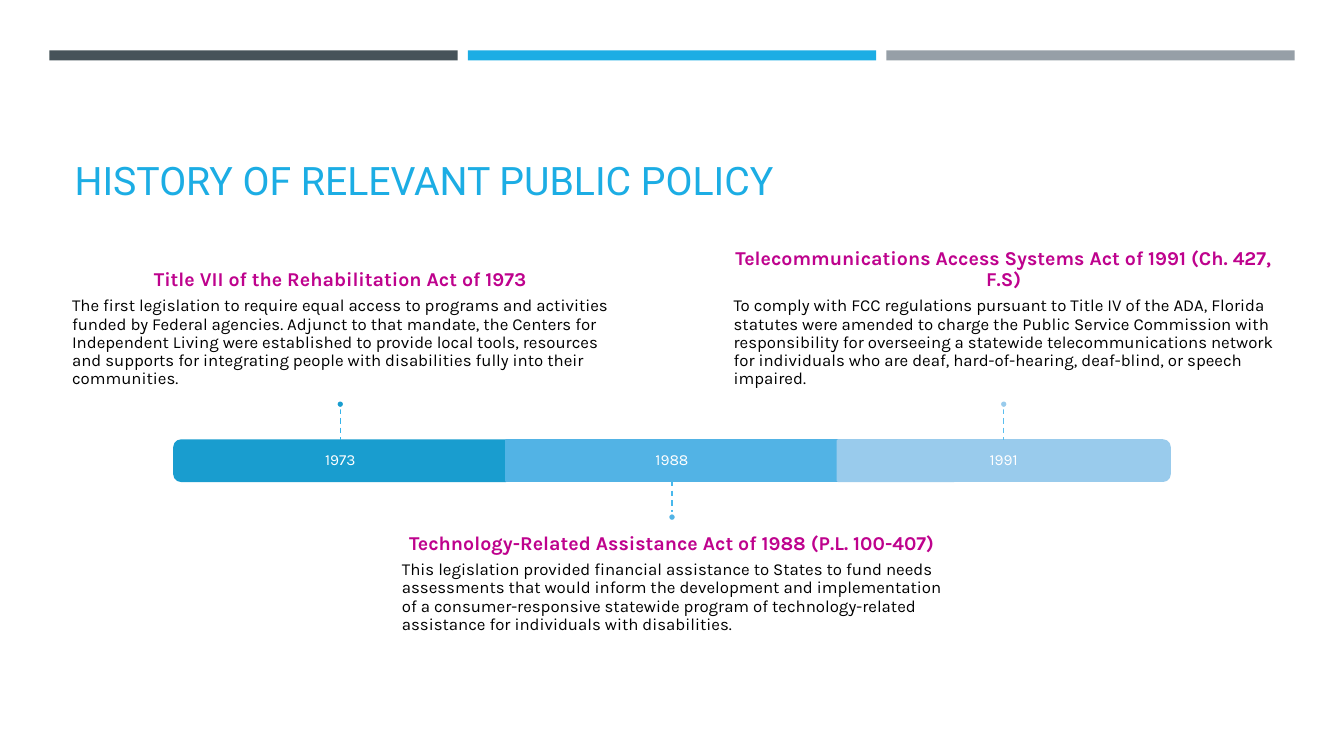
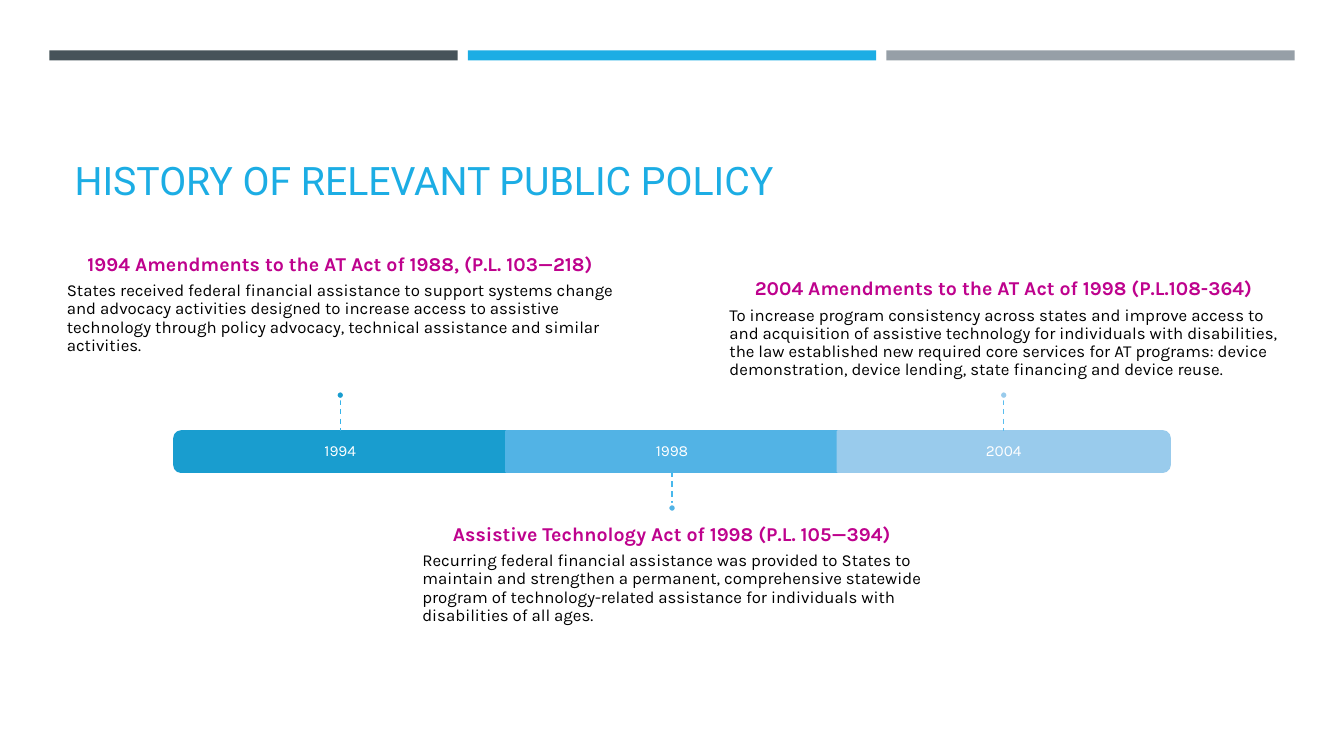
from lxml.etree import SubElement
from pptx import Presentation
from pptx.dml.color import RGBColor
from pptx.enum.dml import MSO_LINE
from pptx.enum.shapes import MSO_CONNECTOR, MSO_SHAPE
from pptx.enum.text import MSO_ANCHOR as Anchor, MSO_AUTO_SIZE, PP_ALIGN as Align
from pptx.oxml.ns import qn
from pptx.util import Inches, Pt

# Content: year, heading, description, extra space below the text
TITLE = "HISTORY OF RELEVANT PUBLIC POLICY"
TIMELINES = [
    {"bar_top": 4.37, "events": [
        ("1973", "Title VII of the Rehabilitation Act of 1973",
         "The first legislation to require equal access to programs and activities funded by "
         "Federal agencies. Adjunct to that mandate, the Centers for Independent Living were "
         "established to provide local tools, resources and supports for integrating people "
         "with disabilities fully into their communities.", 0),
        ("1988", "Technology-Related Assistance Act of 1988 (P.L. 100-407)",
         "This legislation provided financial assistance to States to fund needs assessments "
         "that would inform the development and implementation of a consumer-responsive "
         "statewide program of technology-related assistance for individuals with "
         "disabilities.", 0),
        ("1991", "Telecommunications Access Systems Act of 1991 (Ch. 427, F.S)",
         "To comply with FCC regulations pursuant to Title IV of the ADA, Florida statutes "
         "were amended to charge the Public Service Commission with responsibility for "
         "overseeing a statewide telecommunications network for individuals who are deaf, "
         "hard-of-hearing, deaf-blind, or speech impaired.", 0),
    ]},
    {"bar_top": 4.28, "events": [
        ("1994", "1994 Amendments to the AT Act of 1988, (P.L. 103—218)",
         "States received federal financial assistance to support systems change and advocacy "
         "activities designed to increase access to assistive technology through policy "
         "advocacy, technical assistance and similar activities.", 0.24),
        ("1998", "Assistive Technology Act of 1998 (P.L. 105—394)",
         "Recurring federal financial assistance was provided to States to maintain and "
         "strengthen a permanent, comprehensive statewide program of technology-related "
         "assistance for individuals with disabilities of all ages.", 0),
        ("2004", "2004 Amendments to the AT Act of 1998 (P.L.108-364)",
         "To increase program consistency across states and improve access to and acquisition "
         "of assistive technology for individuals with disabilities, the law established new "
         "required core services for AT programs: device demonstration, device lending, state "
         "financing and device reuse.", 0),
    ]},
]

# Shared style
COLORS = {"slate": "465359", "sky": "1CADE4", "gray": "969FA7", "magenta": "BE028D",
          "black": "000000", "white": "FFFFFF"}
BANDS = ["slate", "sky", "gray"]
# Shape, rotation, fill, stem colour, whether the text is above the bar
SEGMENTS = [
    (MSO_SHAPE.ROUND_2_SAME_RECTANGLE, 270, "199DCF", "36B3E9", True),
    (MSO_SHAPE.RECTANGLE, 0, "52B3E5", "48B8EC", False),
    (MSO_SHAPE.ROUND_2_SAME_RECTANGLE, 90, "99CBEC", "5ABEEF", True),
]
SLIDE_WIDTH, SLIDE_HEIGHT = 13.33, 7.5
BAND_LEFT, BAND_TOP, BAND_WIDTH, BAND_HEIGHT, BAND_GAP = 0.49, 0.5, 4.05, 0.1, 0.1
SEGMENT_WIDTH, SEGMENT_HEIGHT = 3.29, 0.4
STEM, DOT = 0.32, 0.08
TEXT_WIDTH, TEXT_HEIGHT, TEXT_INSET = 5.48, 1.39, 0.12


def rgb(name):
    return RGBColor.from_string(COLORS.get(name, name))


def add_block(slide, kind, box, fill, line=None, rotation=0):
    shape = slide.shapes.add_shape(kind, *map(Inches, box))
    shape.shadow.inherit = False
    shape.rotation = rotation
    shape.fill.solid()
    shape.fill.fore_color.rgb = rgb(fill)
    if line:
        shape.line.color.rgb = rgb(line)
        shape.line.width = Pt(1.75)
    else:
        shape.line.fill.background()
    return shape


def write(paragraph, text, size, color, font="Karla", bold=False, align=Align.LEFT,
          spacing=0.9, after=0):
    paragraph.alignment = align
    paragraph.line_spacing = spacing
    paragraph.space_after = Pt(after)
    run = paragraph.add_run()
    run.text = text
    run.font.name, run.font.size, run.font.bold = font, Pt(size), bold
    run.font.color.rgb = rgb(color)


def add_frame(slide, box, anchor, top=0, bottom=0):
    frame = slide.shapes.add_textbox(*map(Inches, box)).text_frame
    frame.word_wrap = True
    frame.vertical_anchor = anchor
    frame.margin_left = frame.margin_right = 0
    frame.margin_top, frame.margin_bottom = Inches(top), Inches(bottom)
    return frame


def add_stem(slide, x, start, end, color):
    stem = slide.shapes.add_connector(
        MSO_CONNECTOR.STRAIGHT, *map(Inches, (x, start, x, end)))
    stem.line.color.rgb = rgb(color)
    stem.line.width = Pt(1)
    stem.line.dash_style = MSO_LINE.DASH
    SubElement(stem.element.spPr, qn("a:effectLst"))


def add_event(slide, column, bar_top, event):
    year, heading, description, space_below = event
    kind, rotation, fill, stem_color, above = SEGMENTS[column]
    center = SLIDE_WIDTH / 2 + (column - 1) * SEGMENT_WIDTH
    middle = bar_top + SEGMENT_HEIGHT / 2

    # Bar segment, turned so that the rounded side faces outward
    width, height = SEGMENT_WIDTH, SEGMENT_HEIGHT
    if rotation:
        width, height = height, width
    add_block(slide, kind, (center - width / 2, middle - height / 2, width, height),
              fill, fill, rotation)
    label = add_frame(slide, (center - SEGMENT_WIDTH / 2, bar_top, SEGMENT_WIDTH,
                              SEGMENT_HEIGHT), Anchor.MIDDLE)
    write(label.paragraphs[0], year, 11, "white", align=Align.CENTER)

    # Stem, dot and text, stacked away from the bar
    if above:
        start, end = bar_top - STEM, bar_top
        dot_top = start - DOT
        text_top, anchor = dot_top - TEXT_HEIGHT, Anchor.BOTTOM
        insets = {"bottom": TEXT_INSET + space_below}
    else:
        start = bar_top + SEGMENT_HEIGHT
        end = dot_top = start + STEM
        text_top, anchor = dot_top + DOT, Anchor.TOP
        insets = {"top": TEXT_INSET}
    add_stem(slide, center, start, end, stem_color)
    add_block(slide, MSO_SHAPE.OVAL, (center - DOT / 2, dot_top, DOT, DOT), fill, "white")
    frame = add_frame(slide, (center - TEXT_WIDTH / 2, text_top, TEXT_WIDTH, TEXT_HEIGHT),
                      anchor, **insets)
    # Centre the left-aligned text as a block
    frame._txBody.bodyPr.set("anchorCtr", "1")
    write(frame.paragraphs[0], heading, 14, "magenta", bold=True, align=Align.CENTER, after=4.9)
    write(frame.add_paragraph(), description, 12, "black")


def add_bands(layout, slide):
    """Draw the bands on a slide, then move them to its layout."""
    for index, color in enumerate(BANDS):
        left = BAND_LEFT + index * (BAND_WIDTH + BAND_GAP)
        band = add_block(slide, MSO_SHAPE.RECTANGLE,
                         (left, BAND_TOP, BAND_WIDTH, BAND_HEIGHT), color)
        layout.shapes.element.append(band.element)


def main():
    presentation = Presentation()
    presentation.slide_width = Inches(SLIDE_WIDTH)
    presentation.slide_height = Inches(SLIDE_HEIGHT)
    layout = presentation.slide_layouts.get_by_name("Title Only")
    heading = layout.placeholders[0]
    heading.left, heading.top, heading.width, heading.height = map(
        Inches, (0.64, 0.77, 12.06, 1.3))

    for number, timeline in enumerate(TIMELINES):
        slide = presentation.slides.add_slide(layout)
        if number == 0:
            add_bands(layout, slide)
        frame = slide.shapes.title.text_frame
        frame.vertical_anchor = Anchor.BOTTOM
        frame.auto_size = MSO_AUTO_SIZE.NONE
        write(frame.paragraphs[0], TITLE, 28, "sky", font="Roboto", spacing=1)
        for column, event in enumerate(timeline["events"]):
            add_event(slide, column, timeline["bar_top"], event)
    presentation.save("out.pptx")


if __name__ == "__main__":
    main()
